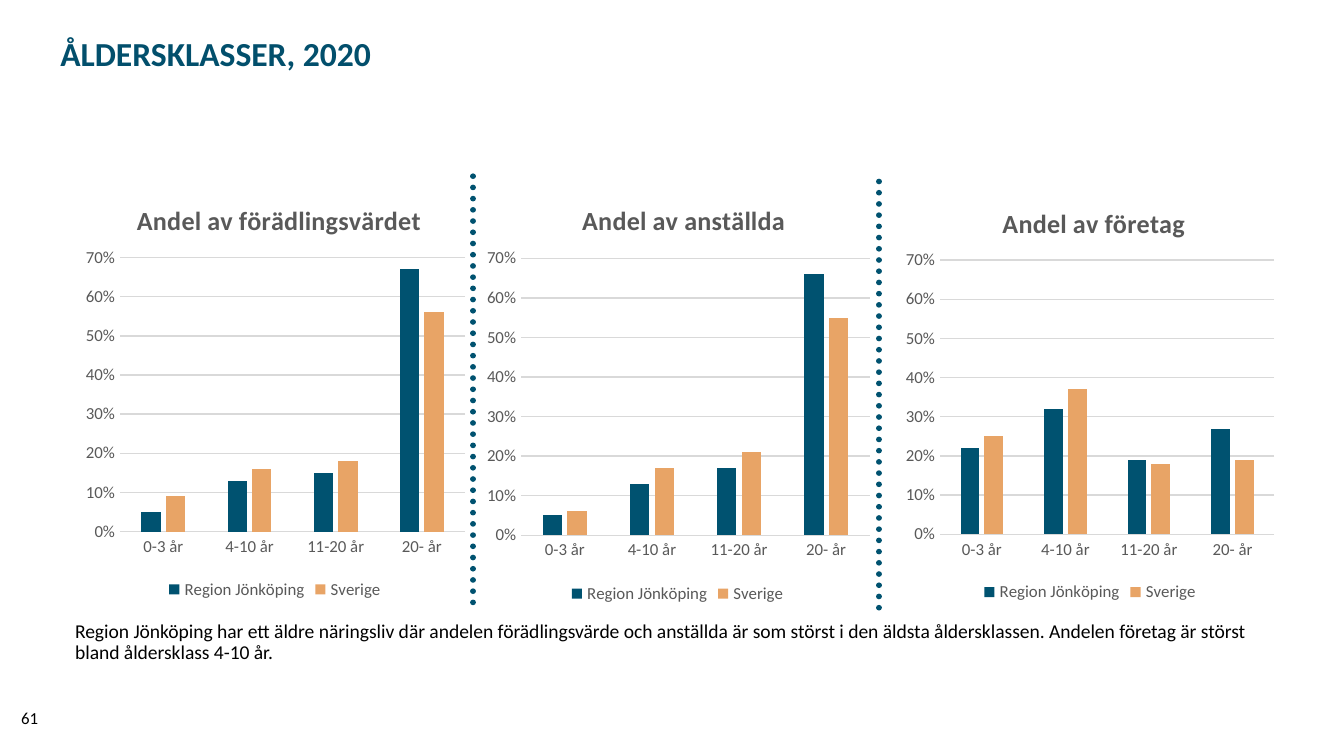
from lxml.etree import SubElement
from pptx import Presentation
from pptx.chart.data import CategoryChartData
from pptx.dml.color import RGBColor
from pptx.enum.chart import XL_CHART_TYPE, XL_LEGEND_POSITION, XL_TICK_MARK
from pptx.enum.dml import MSO_LINE
from pptx.enum.shapes import MSO_CONNECTOR
from pptx.enum.text import MSO_ANCHOR
from pptx.oxml.ns import qn
from pptx.util import Cm, Pt

BLUE, SAND, GRAY, PALE = "005270", "E8A466", "595959", "D9D9D9"
AGES = ["0-3 år", "4-10 år", "11-20 år", "20- år"]
AREAS = [("Region Jönköping", BLUE), ("Sverige", SAND)]
CHARTS = [
    ("Andel av förädlingsvärdet", 0.14, (1.45, 3.33, 7.49, 8.1),
     [(0.05, 0.13, 0.15, 0.67), (0.09, 0.16, 0.18, 0.56)]),
    ("Andel av anställda", 0.25, (9.02, 3.33, 7.57, 8.18),
     [(0.05, 0.13, 0.17, 0.66), (0.06, 0.17, 0.21, 0.55)]),
    ("Andel av företag", 0.26, (16.97, 3.38, 7.26, 8.1),
     [(0.22, 0.32, 0.19, 0.27), (0.25, 0.37, 0.18, 0.19)]),
]
NOTE = ("Region Jönköping har ett äldre näringsliv där andelen förädlingsvärde "
        "och anställda är som störst i den äldsta åldersklassen. Andelen företag "
        "är störst bland åldersklass 4-10 år.")


def color(code):
    return RGBColor.from_string(code)


class Deck:
    face = "Calibri"

    def __init__(self, wide, high):
        self.file = Presentation()
        self.file.slide_width, self.file.slide_height = Cm(wide), Cm(high)
        self.slide = self.file.slides.add_slide(self.file.slide_layouts[6])

    def style(self, font, size, code, bold=False):
        font.name, font.size, font.bold = self.face, Pt(size), bold
        font.color.rgb = color(code)

    def text(self, words, box, size, code="000000", bold=False, gap=1.0):
        frame = self.slide.shapes.add_textbox(*map(Cm, box)).text_frame
        frame.word_wrap = True
        frame.text = words
        line = frame.paragraphs[0]
        line.line_spacing = gap
        self.style(line.runs[0].font, size, code, bold)
        return frame

    def title(self, words, box):
        frame = self.text(words, box, 18, "024F6C", True, 0.7)
        frame.vertical_anchor = MSO_ANCHOR.BOTTOM
        frame.margin_left = frame.margin_right = 0
        frame.margin_top = frame.margin_bottom = 0

    def dots(self, x, top, end):
        rule = self.slide.shapes.add_connector(
            MSO_CONNECTOR.STRAIGHT, Cm(x), Cm(top), Cm(x), Cm(end))
        rule.line.color.rgb = color(BLUE)
        rule.line.width = Pt(3)
        rule.line.dash_style = MSO_LINE.ROUND_DOT
        props = rule.element.spPr
        props.find(qn("a:ln")).set("cap", "rnd")
        SubElement(props, qn("a:effectLst"))

    def place(self, part, **spots):
        layout = part.get_or_add_layout() if hasattr(part, "get_or_add_layout") \
            else part.find(qn("c:layout"))
        if layout is None:
            layout = SubElement(part, qn("c:layout"))
            part.insert(1 if part.find(qn("c:tx")) is not None else 0, layout)
        for child in list(layout):
            layout.remove(child)
        manual = SubElement(layout, qn("c:manualLayout"))
        if "w" in spots:
            SubElement(manual, qn("c:layoutTarget")).set("val", "inner")
        for axis in "xy":
            SubElement(manual, qn(f"c:{axis}Mode")).set("val", "edge")
        for key, val in spots.items():
            SubElement(manual, qn(f"c:{key}")).set("val", str(val))

    def chart(self, name, left, box, rows):
        data = CategoryChartData(number_format="0%")
        data.categories = AGES
        for (area, _), vals in zip(AREAS, rows):
            data.add_series(area, vals)
        chart = self.slide.shapes.add_chart(
            XL_CHART_TYPE.COLUMN_CLUSTERED, *map(Cm, box), data).chart
        self.style(chart.font, 10, "000000")

        frame = chart.chart_title.text_frame
        frame.text = name
        self.style(frame.paragraphs[0].runs[0].font, 14, GRAY, True)
        chart.chart_title.include_in_layout = False
        self.place(chart.chart_title.element if hasattr(chart.chart_title, "element")
                   else frame._txBody.getparent().getparent(), x=left, y=0.05)

        plot = chart.plots[0]
        plot.gap_width, plot.overlap = 219, -27
        plot.vary_by_categories = False
        for bars, (_, code) in zip(plot.series, AREAS):
            bars.format.fill.solid()
            bars.format.fill.fore_color.rgb = color(code)
        area = chart.element.find(".//" + qn("c:plotArea"))             if hasattr(chart, "element") else chart._chartSpace.find(".//" + qn("c:plotArea"))
        self.place(area, x=0.11, y=0.19, w=0.87, h=0.64)

        cats, vals = chart.category_axis, chart.value_axis
        for axis in (cats, vals):
            axis.major_tick_mark = axis.minor_tick_mark = XL_TICK_MARK.NONE
            self.style(axis.tick_labels.font, 9, GRAY)
        vals.minimum_scale, vals.maximum_scale, vals.major_unit = 0, 0.7, 0.1
        vals.tick_labels.number_format = "0%"
        vals.tick_labels.number_format_is_linked = False
        vals.format.line.fill.background()
        for line in (cats.format.line, vals.major_gridlines.format.line):
            line.color.rgb = color(PALE)
            line.width = Pt(0.75)

        chart.has_legend = True
        chart.legend.position = XL_LEGEND_POSITION.BOTTOM
        chart.legend.include_in_layout = False
        self.style(chart.legend.font, 9, GRAY)


def main():
    deck = Deck(25.4, 14.29)
    deck.title("ÅLDERSKLASSER, 2020", (1.14, 0.56, 23.09, 0.81))
    deck.text(NOTE, (1.17, 11.63, 22.81, 1.47), 10.5, gap=0.9)
    for x, top in ((8.94, 3.33), (16.61, 3.43)):
        deck.dots(x, top, top + 8.1)
    for item in CHARTS:
        deck.chart(*item)
    deck.text("61", (0.15, 13.26, 0.99, 0.51), 9)
    deck.file.save("out.pptx")


if __name__ == "__main__":
    main()
